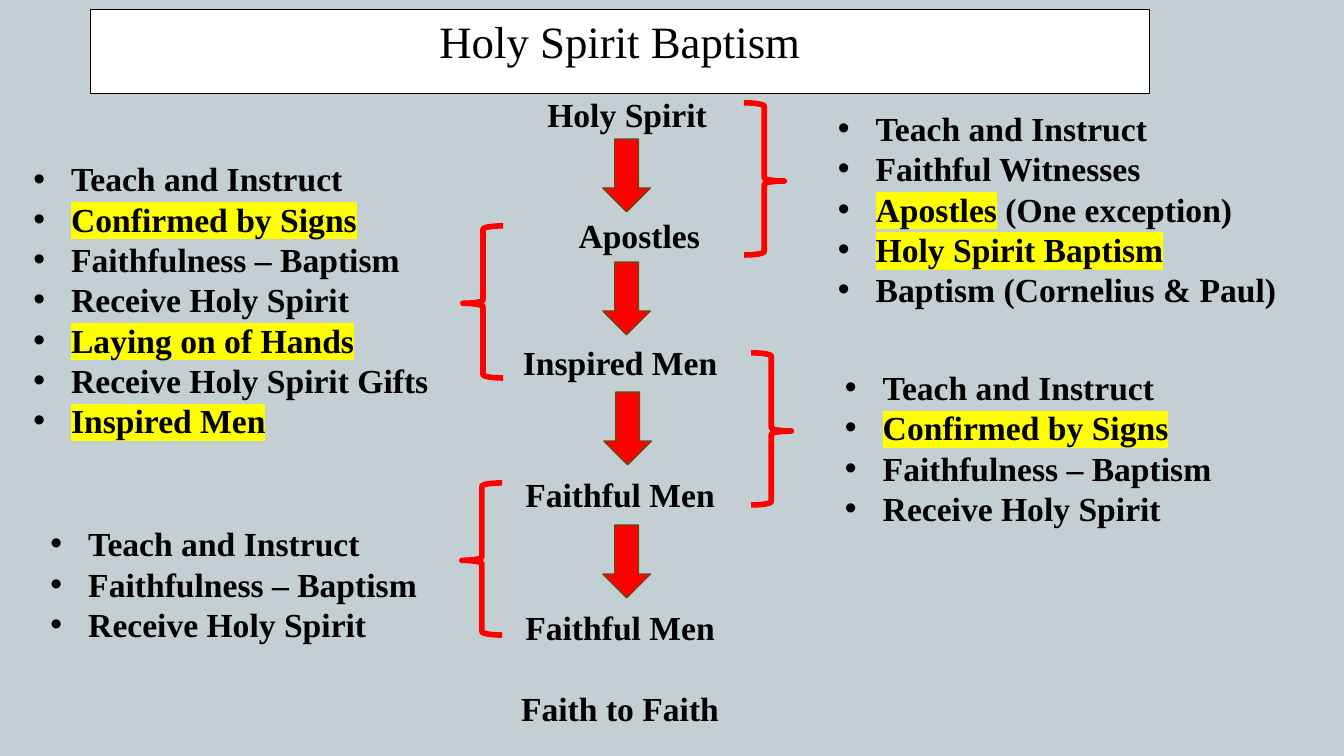
from lxml import etree
from pptx import Presentation
from pptx import util as u
from pptx.dml.color import RGBColor
from pptx.enum import shapes, text
from pptx.oxml.ns import qn

BACKGROUND = RGBColor(0xC3, 0xCF, 0xD3)
WHITE = RGBColor(0xFF, 0xFF, 0xFF)
BLACK = RGBColor(0x00, 0x00, 0x00)
RED = RGBColor(0xFF, 0x00, 0x00)
BROWN = RGBColor(0x6C, 0x47, 0x0D)
YELLOW = RGBColor(0xFF, 0xFF, 0x00)

COMPARISON_LAYOUT = 4  # a title and four body placeholders


class Diagram:
    """Holds the style and the slide; lengths are grid columns and rows."""

    cell = u.Inches(0.1)
    font_name = "Times New Roman"
    text_size, title_size = 24, 32
    indent = 3.75

    def __init__(self, deck):
        self.page = deck.slides.add_slide(deck.slide_layouts[COMPARISON_LAYOUT])
        fill = self.page.background.fill
        fill.solid()
        fill.fore_color.rgb = BACKGROUND
        self.bodies = iter(list(self.page.placeholders)[1:])

    def grid(self, *lengths):
        return [int(length * self.cell) for length in lengths]

    def place(self, box, *bounds):
        box.left, box.top, box.width, box.height = self.grid(*bounds)

    def paint(self, shape, line, weight, fill=None):
        if fill is None:
            shape.fill.background()
        else:
            shape.fill.solid()
            shape.fill.fore_color.rgb = fill
        shape.line.color.rgb = line
        shape.line.width = u.Pt(weight)

    def prepare(self, box):
        frame = box.text_frame
        frame.word_wrap = True
        frame.auto_size = text.MSO_AUTO_SIZE.SHAPE_TO_FIT_TEXT
        frame.vertical_anchor = text.MSO_ANCHOR.TOP
        return frame

    def style(self, para, size=text_size, bold=True, align=text.PP_ALIGN.CENTER):
        para.alignment = align
        para.line_spacing = 1.0
        para.space_before = u.Pt(0)
        para.font.name = self.font_name
        para.font.size = u.Pt(size)
        para.font.bold = bold
        para.font.color.rgb = BLACK

    def title(self, words, *bounds):
        box = self.page.shapes.title
        self.place(box, *bounds)
        self.paint(box, BLACK, 0.75, WHITE)
        para = self.prepare(box).paragraphs[0]
        para.text = words
        self.style(para, self.title_size, bold=False)

    def label(self, lines, left, top, width=27.4, gap=0):
        """Centred lines, with a gap in points between them."""
        box = self.page.shapes.add_textbox(*self.grid(left, top, width, 5))
        frame = self.prepare(box)
        frame.text = "\n".join(lines)
        for number, para in enumerate(frame.paragraphs):
            self.style(para)
            para.space_before = u.Pt(gap if number else 0)

    def bullets(self, items, *bounds):
        """A bulleted list; words between asterisks are highlighted."""
        box = next(self.bodies)
        self.place(box, *bounds)
        frame = self.prepare(box)
        for number, item in enumerate(items):
            para = frame.add_paragraph() if number else frame.paragraphs[0]
            self.style(para, align=text.PP_ALIGN.LEFT)
            self.add_bullet(para)
            for part, words in enumerate(item.split("*")):
                if words:
                    span = para.add_run()
                    span.text = words
                    if part % 2:
                        self.highlight(span)

    def add_bullet(self, para):
        properties = para._p.get_or_add_pPr()
        indent, = self.grid(self.indent)
        properties.set("marL", str(indent))
        properties.set("indent", str(-indent))
        defaults = properties.find(qn("a:defRPr"))
        for tag, key, value in (("a:buFont", "typeface", "Arial"), ("a:buChar", "char", "•")):
            mark = etree.Element(qn(tag))
            mark.set(key, value)
            defaults.addprevious(mark)

    def highlight(self, span):
        marker = etree.SubElement(span.font._element, qn("a:highlight"))
        etree.SubElement(marker, qn("a:srgbClr")).set("val", str(YELLOW))

    def arrow(self, left, top):
        arrow = self.page.shapes.add_shape(
            shapes.MSO_SHAPE.DOWN_ARROW, *self.grid(left, top, 4.7, 7.2))
        arrow.shadow.inherit = False
        self.paint(arrow, BROWN, 1, RED)

    def brace(self, left, top, tip, rotation=0):
        brace = self.page.shapes.add_shape(
            shapes.MSO_SHAPE.RIGHT_BRACE, *self.grid(left, top, 4, 15.1))
        brace.shadow.inherit = False
        brace.adjustments[0], brace.adjustments[1] = 0.083, tip
        brace.rotation = rotation
        self.paint(brace, RED, 4)


def main():
    deck = Presentation()
    deck.slide_width, deck.slide_height = u.Inches(13.33), u.Inches(7.5)
    diagram = Diagram(deck)
    diagram.title("Holy Spirit Baptism", 9, 0.9, 105, 6.4)

    # Central chain from the Holy Spirit to faithful men
    for words, left, top in (("Holy Spirit", 48.5, 8.8), ("Apostles", 49.7, 20.8),
                             ("Inspired Men", 47.8, 33.4), ("Faithful Men", 47.8, 46.5)):
        diagram.label([words], left, top)
    diagram.label(["Faithful Men", "Faith to Faith"], 47.8, 59.7, gap=29)
    for left, top in ((59.8, 13.8), (59.8, 26), (59.9, 38.9), (59.8, 52.1)):
        diagram.arrow(left, top)

    # Braces joining each step to its list
    for left, top in ((73.8, 10.2), (74.5, 35)):
        diagram.brace(left, top, tip=0.514)
    for left, top in ((45.9, 22.4), (45.8, 47.9)):
        diagram.brace(left, top, tip=0.491, rotation=180)

    # Lists beside the braces
    teach, signs = "Teach and Instruct", "*Confirmed by Signs*"
    baptism, receive = "Faithfulness – Baptism", "Receive Holy Spirit"
    diagram.bullets([teach, signs, baptism, receive, "*Laying on of Hands*",
                     "Receive Holy Spirit Gifts", "*Inspired Men*"], 2.3, 15.2, 44, 29.3)
    diagram.bullets([teach, baptism, receive], 4, 51.4, 38.9, 13.1)
    diagram.bullets([teach, "Faithful Witnesses", "*Apostles* (One exception)",
                     "*Holy Spirit Baptism*", "Baptism (Cornelius & Paul)"],
                    82.1, 10.2, 46, 21.2)
    diagram.bullets([teach, signs, baptism, receive], 82.8, 35.9, 39.7, 17.2)

    deck.save("out.pptx")


if __name__ == "__main__":
    main()
